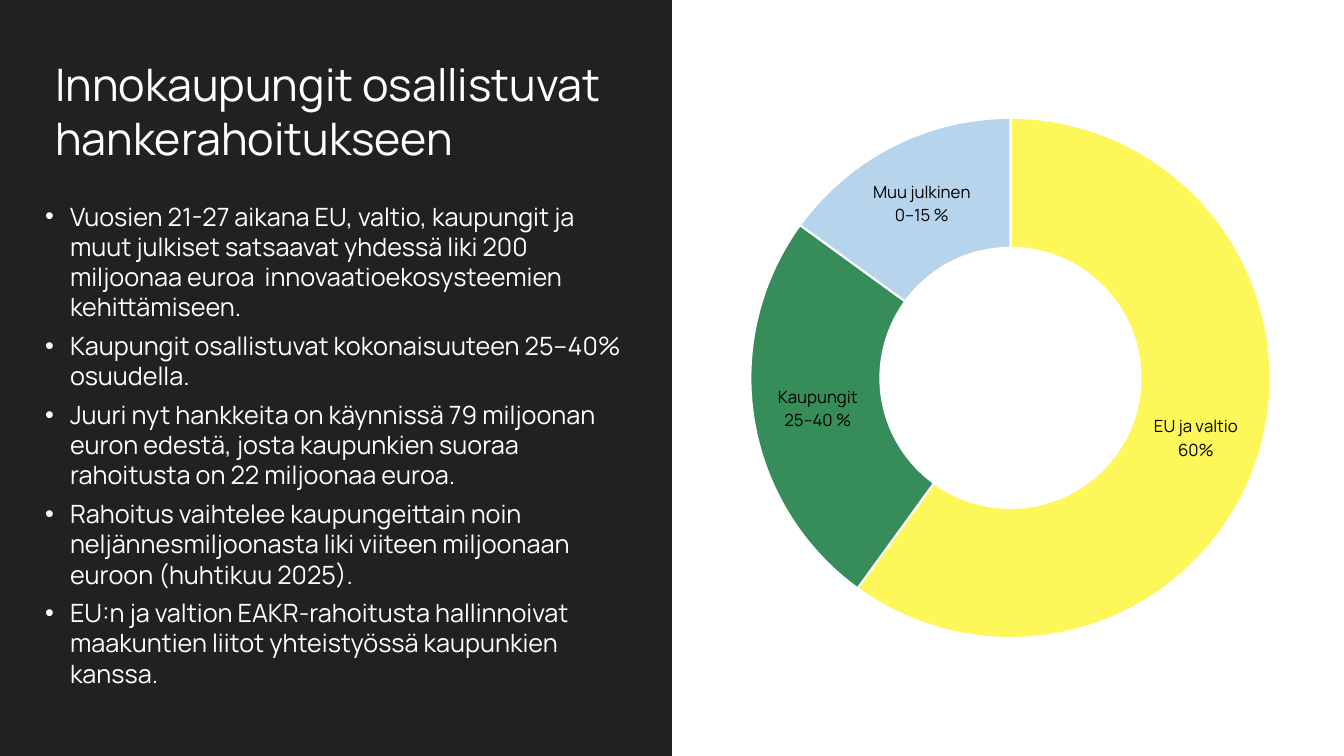
from lxml.etree import SubElement as Sub
from pptx import Presentation
from pptx.chart.data import CategoryChartData as Data
from pptx.dml.color import RGBColor as Rgb
from pptx.enum.chart import XL_CHART_TYPE as Kind
from pptx.enum.shapes import MSO_SHAPE as Form
from pptx.enum.text import MSO_ANCHOR as Anchor
from pptx.oxml import parse_xml
from pptx.oxml.ns import nsdecls, qn
from pptx.util import Pt

PX = 914400 / 100.8
FONT = "Manrope"
HUES = {
    "dark": "212121",
    "white": "FFFFFF",
    "black": "000000",
    "yellow": "FEF75A",
    "green": "368D5A",
    "blue": "B7D4ED",
}
TITLE = "Innokaupungit osallistuvat hankerahoitukseen"
POINTS = [
    "Vuosien 21-27 aikana EU, valtio, kaupungit ja muut julkiset satsaavat yhdessä liki 200 miljoonaa euroa  innovaatioekosysteemien kehittämiseen.",
    "Kaupungit osallistuvat kokonaisuuteen 25–40% osuudella.",
    "Juuri nyt hankkeita on käynnissä 79 miljoonan euron edestä, josta kaupunkien suoraa rahoitusta on 22 miljoonaa euroa.",
    "Rahoitus vaihtelee kaupungeittain noin neljännesmiljoonasta liki viiteen miljoonaan euroon (huhtikuu 2025).",
    "EU:n ja valtion EAKR-rahoitusta hallinnoivat maakuntien liitot yhteistyössä kaupunkien kanssa.",
]
SHARES = [
    ("EU ja valtio", 60, "yellow", None),
    ("Kaupungit", 25, "green", "25–40 %"),
    ("Muu julkinen", 15, "blue", "0–15 %"),
]


def px(n):
    return round(n * PX)


def hue(name):
    return Rgb.from_string(HUES[name])


def apply(item, values):
    for key, value in values.items():
        setattr(item, key, value)


def style(font, size, color):
    apply(font, {"name": FONT, "size": Pt(size)})
    font.color.rgb = hue(color)


def paint(fill, color):
    fill.solid()
    fill.fore_color.rgb = hue(color)


def panel(slide, box, color):
    shape = slide.shapes.add_shape(Form.RECTANGLE, *map(px, box))
    shape.shadow.inherit = False
    paint(shape.fill, color)
    shape.line.fill.background()


def bullet(para):
    props = para._p.get_or_add_pPr()
    props.set("marL", str(px(25)))
    props.set("indent", str(-px(25)))
    Sub(props, qn("a:buFont")).set("typeface", "Arial")
    Sub(props, qn("a:buChar")).set("char", "•")


def text(slide, box, lines, size, inset=(0, 0), listed=False):
    frame = slide.shapes.add_textbox(*map(px, box)).text_frame
    side, edge = map(px, inset)
    apply(frame, {
        "word_wrap": True,
        "vertical_anchor": Anchor.TOP,
        "margin_left": side,
        "margin_right": side,
        "margin_top": edge,
        "margin_bottom": edge,
    })
    for i, line in enumerate(lines):
        para = frame.add_paragraph() if i else frame.paragraphs[0]
        if listed:
            para.space_after = Pt(6)
            bullet(para)
        run = para.add_run()
        run.text = line
        style(run.font, size, "white")


def layout(chart, place):
    area = chart._chartSpace.find(".//" + qn("c:plotArea"))
    for old in area.findall(qn("c:layout")):
        area.remove(old)
    node = parse_xml(f"<c:layout {nsdecls('c')}/>")
    area.insert(0, node)
    manual = Sub(node, qn("c:manualLayout"))
    modes = {"layoutTarget": "inner", "xMode": "edge", "yMode": "edge"}
    for key, value in {**modes, **place}.items():
        Sub(manual, qn("c:" + key)).set("val", str(value))


def label(series):
    labels = series.data_labels
    apply(labels, {
        "show_value": False,
        "show_category_name": True,
        "show_percentage": True,
        "number_format": "0%",
        "number_format_is_linked": False,
    })
    style(labels.font, 12, "black")
    mark = parse_xml(f"<c:separator {nsdecls('c')}>\n</c:separator>")
    labels._element.find(qn("c:showBubbleSize")).addnext(mark)


def donut(slide, box):
    data = Data()
    data.categories = [share[0] for share in SHARES]
    data.add_series("Series 1", [share[1] for share in SHARES])
    chart = slide.shapes.add_chart(Kind.DOUGHNUT, *map(px, box), data).chart
    apply(chart, {"has_title": False, "has_legend": False})
    style(chart.font, 10, "black")
    layout(chart, {"x": 0.11, "y": 0.02, "w": 0.78, "h": 0.96})
    plot = chart.plots[0]
    plot.vary_by_categories = True
    plot._element.find(qn("c:holeSize")).set("val", "75")
    series = plot.series[0]
    label(series)
    for i, (name, _, color, span) in enumerate(SHARES):
        point = series.points[i]
        paint(point.format.fill, color)
        point.format.line.color.rgb = hue("white")
        point.format.line.width = Pt(1.5)
        if span:
            frame = point.data_label.text_frame
            frame.text = f"{name}\n{span}"
            for para in frame.paragraphs:
                for run in para.runs:
                    style(run.font, 12, "black")


def main():
    deck = Presentation()
    apply(deck, {"slide_width": px(1344), "slide_height": px(756)})
    slide = deck.slides.add_slide(deck.slide_layouts[6])
    panel(slide, (0, 0, 672, 756), "dark")
    text(slide, (45, 201, 582, 355), POINTS, 18, listed=True)
    donut(slide, (677, 105, 667, 546))
    text(slide, (45, 52, 627, 119), [TITLE], 32, inset=(10, 5))
    deck.save("out.pptx")


if __name__ == "__main__":
    main()
